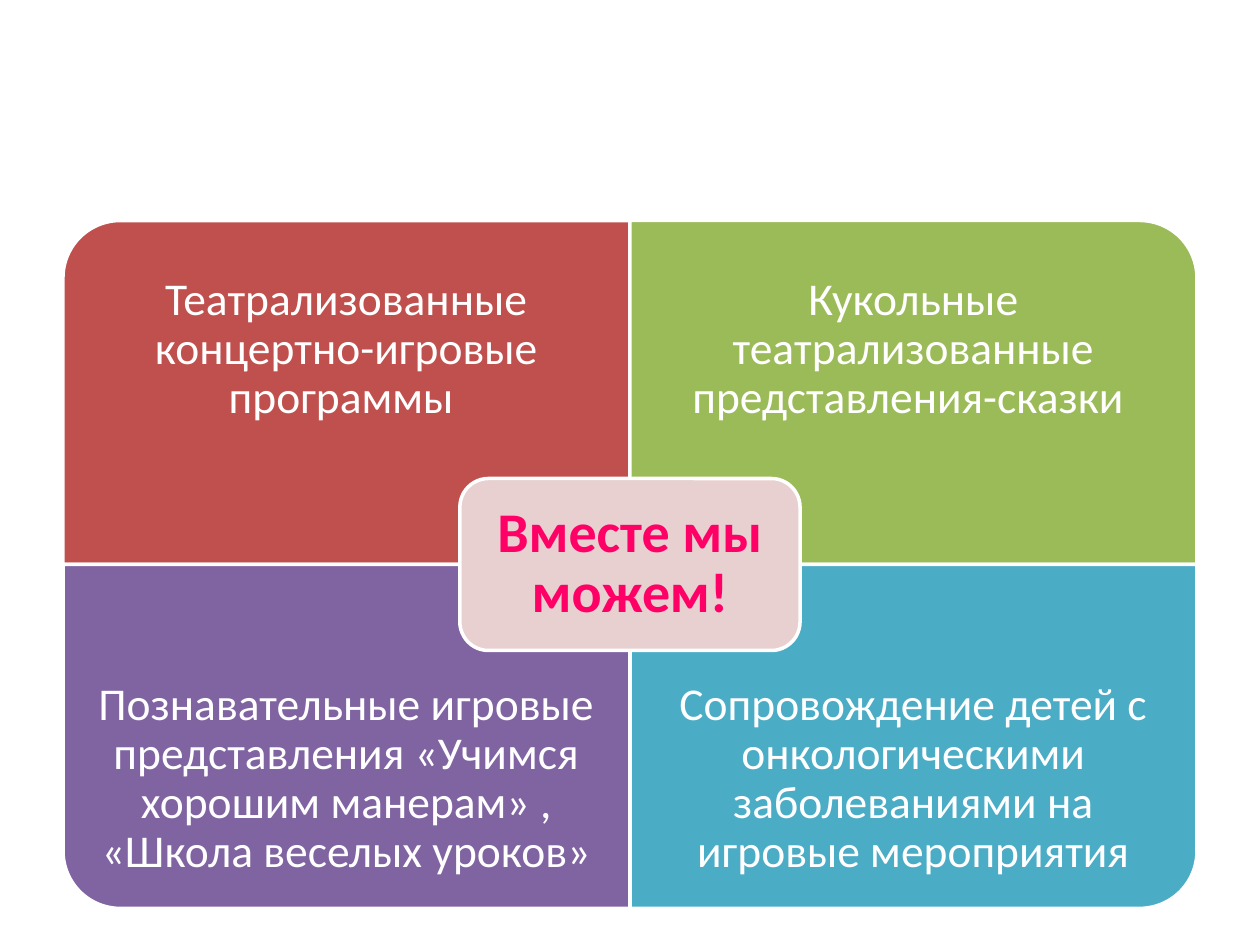
from pptx import Presentation
from pptx.dml.color import RGBColor
from pptx.enum.shapes import MSO_SHAPE
from pptx.enum.text import MSO_ANCHOR, PP_ALIGN
from pptx.util import Inches, Pt

ROUND_ONE, ROUND_ALL = MSO_SHAPE.ROUND_1_RECTANGLE, MSO_SHAPE.ROUNDED_RECTANGLE
MIDDLE, CENTER = MSO_ANCHOR.MIDDLE, PP_ALIGN.CENTER
WHITE = RGBColor(0xFF, 0xFF, 0xFF)
RED = RGBColor(0xC0, 0x50, 0x4D)
GREEN = RGBColor(0x9B, 0xBB, 0x59)
PURPLE = RGBColor(0x80, 0x64, 0xA2)
TEAL = RGBColor(0x4B, 0xAC, 0xC6)
BLUSH = RGBColor(0xE8, 0xD0, 0xD0)
PINK = RGBColor(0xFF, 0x00, 0x66)

QUADRANTS = [
    (0, 0, 270, RED, "Театрализованные концертно-игровые программы "),
    (1, 0, 0, GREEN, "Кукольные театрализованные представления-сказки "),
    (0, 1, 180, PURPLE,
     "Познавательные игровые представления «Учимся хорошим манерам» , «Школа веселых уроков»"),
    (1, 1, 90, TEAL,
     "Сопровождение детей с онкологическими заболеваниями на игровые мероприятия"),
]
CENTRE_TEXT = "Вместе мы можем!"

SLIDE_W, SLIDE_H = 10, 7.5
LEFT, TOP = 0.5, 1.75
CELL_W, CELL_H = 4.5, 2.73
TEXT_H = CELL_H * 0.75
HUB_W, HUB_H = CELL_W * 0.6, CELL_H / 2
INSET = 0.2


def add_block(kind, cx, cy, w, h, color, rotation=0):
    s = slide.shapes.add_shape(kind, Inches(cx - w / 2), Inches(cy - h / 2),
                               Inches(w), Inches(h))
    s.rotation = rotation
    s.shadow.inherit = False
    s.fill.solid()
    s.fill.fore_color.rgb = color
    s.line.color.rgb = WHITE
    s.line.width = Pt(2)
    return s


def write(s, text, size, color, bold=False):
    tf = s.text_frame
    frame = {"word_wrap": True, "vertical_anchor": MIDDLE}
    for side in ("left", "right", "top", "bottom"):
        frame[f"margin_{side}"] = Inches(INSET)
    p = tf.paragraphs[0]
    r = p.add_run()
    r.text = text
    para = {"alignment": CENTER, "line_spacing": 0.9, "space_after": Pt(size * 0.35)}
    font = {"name": "Calibri", "size": Pt(size), "bold": bold}
    for target, values in ((tf, frame), (p, para), (r.font, font)):
        for name, value in values.items():
            setattr(target, name, value)
    r.font.color.rgb = color


prs = Presentation()
prs.slide_width, prs.slide_height = Inches(SLIDE_W), Inches(SLIDE_H)
slide = prs.slides.add_slide(prs.slide_layouts[6])

for col, row, rotation, color, text in QUADRANTS:
    x, y = LEFT + col * CELL_W, TOP + row * CELL_H
    w, h = (CELL_H, CELL_W) if rotation % 180 else (CELL_W, CELL_H)
    add_block(ROUND_ONE, x + CELL_W / 2, y + CELL_H / 2, w, h, color, rotation)
    text_top = y + row * (CELL_H - TEXT_H)
    box = slide.shapes.add_textbox(Inches(x), Inches(text_top),
                                   Inches(CELL_W), Inches(TEXT_H))
    write(box, text, 26, WHITE)

hub = add_block(ROUND_ALL, LEFT + CELL_W, TOP + CELL_H, HUB_W, HUB_H, BLUSH)
write(hub, CENTRE_TEXT, 32, PINK, bold=True)

prs.save("out.pptx")
